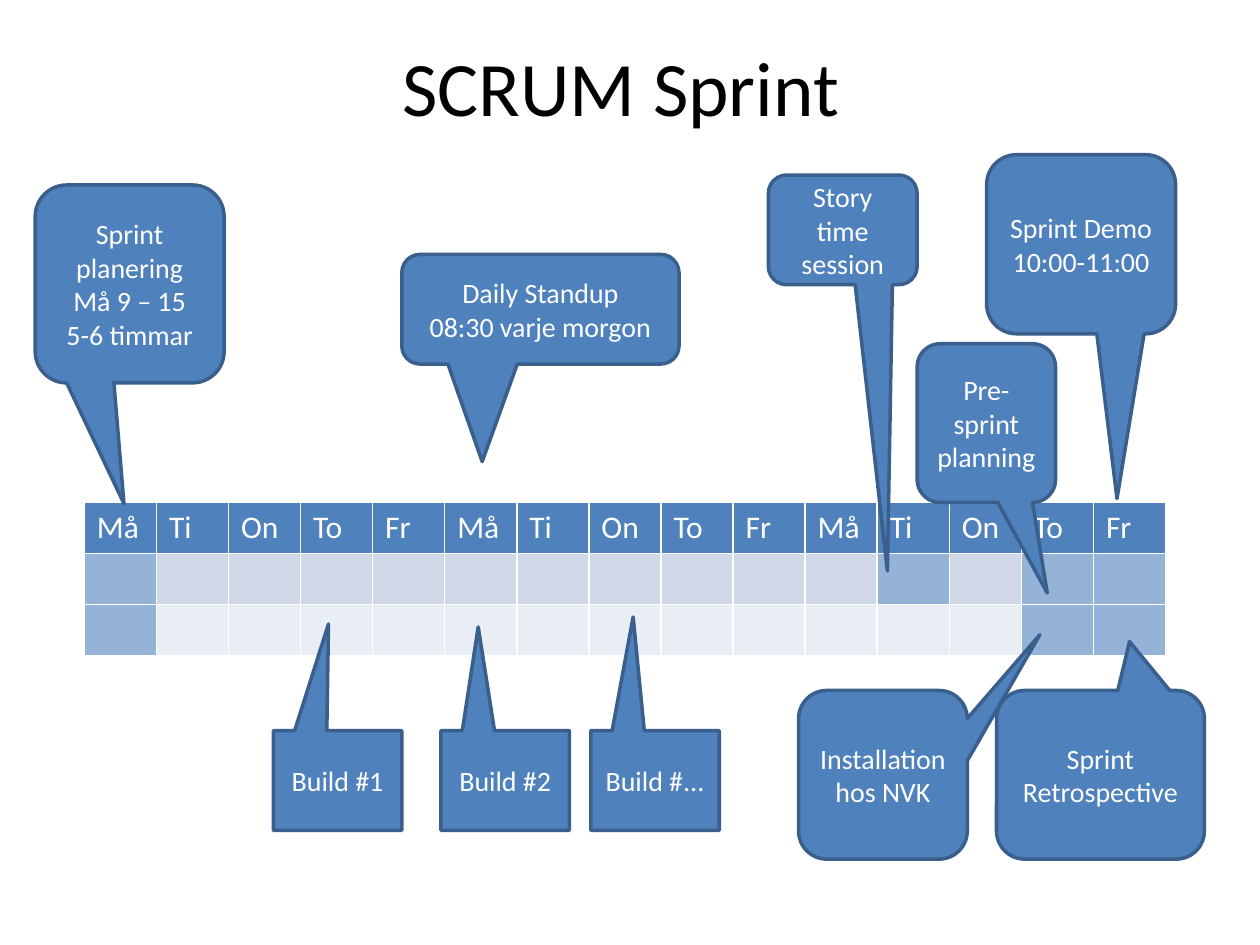
from pptx import Presentation
from pptx.dml.color import RGBColor
from pptx.enum.shapes import MSO_SHAPE
from pptx.enum.text import MSO_ANCHOR, PP_ALIGN
from pptx.util import Cm, Pt

ROUND = MSO_SHAPE.ROUNDED_RECTANGULAR_CALLOUT
SQUARE = MSO_SHAPE.RECTANGULAR_CALLOUT
MIDDLE = MSO_ANCHOR.MIDDLE
CENTER = PP_ALIGN.CENTER

FONT = "Calibri"
BLUE = "4F81BD"
OUTLINE = "3A5F8C"
BUSY = "95B3D7"
BANDS = ["D0D8E8", "E9EDF4"]
WHITE = "FFFFFF"
BLACK = "000000"

WEEKDAYS = ["Må", "Ti", "On", "To", "Fr"]
WEEKS = 3
BUSY_DAYS = [{0, 11, 13, 14}, {0, 13, 14}]

TITLE_BOX = (1.09, 0.13, 22.86, 3.18)
CALENDAR_BOX = (1.7, 10.13, 21.8, 3.09)
EVENTS = [
    ("Sprint planering\nMå 9 – 15\n5-6 timmar", (0.71, 3.73, 3.81, 3.99), (-0.03, 1.11)),
    ("Sprint Demo 10:00-11:00", (19.89, 3.12, 3.81, 3.61), (0.19, 1.42)),
    ("Sprint\nRetrospective", (20.09, 13.92, 4.19, 3.4), (0.14, -0.79)),
    ("Story time session", (15.49, 3.53, 3, 2.21), (0.3, 3.11)),
    ("Pre-sprint\nplanning", (18.49, 6.93, 2.79, 3.2), (0.44, 1.07)),
    ("Installation hos NVK", (16.1, 13.92, 3.4, 3.4), (0.93, -0.83)),
    ("Daily Standup\n08:30 varje morgon", (8.1, 5.13, 5.59, 2.21), (-0.21, 1.39)),
]
BUILD_TOP, BUILD_WIDTH, BUILD_HEIGHT = 14.73, 2.59, 2.01
BUILDS = [
    ("Build #1", 5.51, (-0.07, -1.57)),
    ("Build #...", 11.91, (-0.17, -1.64)),
    ("Build #2", 8.89, (-0.21, -1.54)),
]


def color(value):
    """Return the colour for a hex string."""
    return RGBColor.from_string(value)


def format_text(frame, size, value, align=None):
    """Format every run in a text frame."""
    for para in frame.paragraphs:
        para.alignment = align
        for span in para.runs:
            span.font.name = FONT
            span.font.size = Pt(size)
            span.font.bold = False
            span.font.color.rgb = color(value)


def place_title(page, box, text):
    """Move and format the title placeholder."""
    title = page.shapes.title
    title.left, title.top, title.width, title.height = map(Cm, box)
    title.text_frame.text = text
    title.text_frame.vertical_anchor = MIDDLE
    format_text(title.text_frame, 44, BLACK, CENTER)


def add_calendar(page, box):
    """Add the sprint calendar with its busy days shaded."""
    days = WEEKDAYS * WEEKS
    height = box[3] / (len(BANDS) + 1)
    table = page.shapes.add_table(len(BANDS) + 1, len(days), *map(Cm, box)).table
    for row in table.rows:
        row.height = Cm(height)
    for column, day in enumerate(days):
        table.columns[column].width = Cm(box[2] / len(days))
        header = table.cell(0, column)
        header.text_frame.text = day
        format_text(header.text_frame, 18, WHITE)
        fills = [BLUE] + [BUSY if column in busy else band
                          for busy, band in zip(BUSY_DAYS, BANDS)]
        for row, value in enumerate(fills):
            cell = table.cell(row, column)
            cell.fill.solid()
            cell.fill.fore_color.rgb = color(value)


def add_callout(page, kind, box, text, tip):
    """Add a callout whose tip is offset from its centre by shares of its size."""
    callout = page.shapes.add_shape(kind, *map(Cm, box))
    callout.adjustments[0], callout.adjustments[1] = tip
    callout.shadow.inherit = False
    callout.fill.solid()
    callout.fill.fore_color.rgb = color(BLUE)
    callout.line.color.rgb = color(OUTLINE)
    callout.line.width = Pt(2)
    frame = callout.text_frame
    frame.text = text
    frame.word_wrap = True
    frame.vertical_anchor = MIDDLE
    format_text(frame, 16, WHITE, CENTER)


def main():
    """Build and save the sprint slide."""
    deck = Presentation()
    deck.slide_width, deck.slide_height = Cm(25.4), Cm(19.05)
    page = deck.slides.add_slide(deck.slide_layouts[5])
    place_title(page, TITLE_BOX, "SCRUM Sprint")
    add_calendar(page, CALENDAR_BOX)
    for text, box, tip in EVENTS:
        add_callout(page, ROUND, box, text, tip)
    for text, left, tip in BUILDS:
        add_callout(page, SQUARE, (left, BUILD_TOP, BUILD_WIDTH, BUILD_HEIGHT), text, tip)
    deck.save("out.pptx")


if __name__ == "__main__":
    main()
